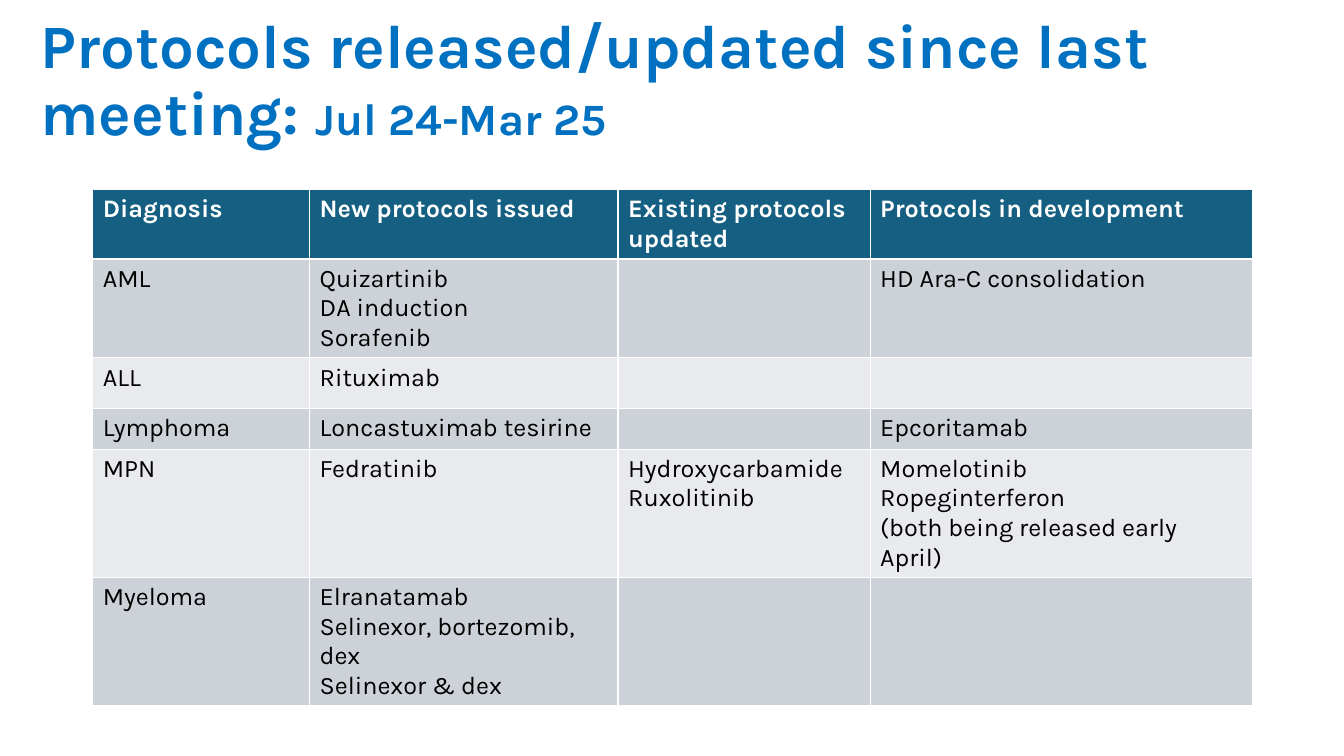
from pptx import Presentation
from pptx.dml.color import RGBColor
from pptx.enum import text
from pptx.util import Inches, Pt

FONT = "Karla"
COLORS = {"title": "0070C0", "header": "156082", "header_text": "FFFFFF",
          "body_text": "000000", "odd": "CCD2D8", "even": "E8EAED"}
TITLE = [("Protocols released/updated since last meeting: ", 44), ("Jul 24-Mar 25", 32)]
ROWS = [
    ("Diagnosis", "New protocols issued", "Existing protocols updated", "Protocols in development"),
    ("AML", "Quizartinib\nDA induction\nSorafenib", "", "HD Ara-C consolidation"),
    ("ALL", "Rituximab", "", ""),
    ("Lymphoma", "Loncastuximab tesirine", "", "Epcoritamab"),
    ("MPN", "Fedratinib", "Hydroxycarbamide\nRuxolitinib",
     "Momelotinib\nRopeginterferon\n(both being released early April)"),
    ("Myeloma", "Elranatamab\nSelinexor, bortezomib, dex\nSelinexor & dex", "", ""),
]
COL_WIDTHS = [2.15, 3.06, 2.5, 3.79]
ROW_HEIGHTS = [0.69, 0.97, 0.5, 0.4, 1.27, 1.27]


def style(r, size, color, bold):
    r.font.name = FONT
    r.font.size = Pt(size)
    r.font.bold = bold
    r.font.color.rgb = RGBColor.from_string(COLORS[color])


def add_title(s):
    sp = s.shapes.title
    sp.left, sp.top, sp.width, sp.height = map(Inches, (0.3, 0.09, 12.73, 1.45))
    tf = sp.text_frame
    tf.word_wrap = True
    tf.auto_size = text.MSO_AUTO_SIZE.NONE
    tf.vertical_anchor = text.MSO_ANCHOR.MIDDLE
    p = tf.paragraphs[0]
    p.alignment = text.PP_ALIGN.LEFT
    p.line_spacing = 0.9
    for words, size in TITLE:
        r = p.add_run()
        r.text = words
        style(r, size, "title", True)


def add_protocols(s):
    tbl = s.shapes.add_table(len(ROWS), len(COL_WIDTHS), Inches(0.92), Inches(1.88),
                             Inches(sum(COL_WIDTHS)), Inches(sum(ROW_HEIGHTS))).table
    for col, width in zip(tbl.columns, COL_WIDTHS):
        col.width = Inches(width)
    for row, height in zip(tbl.rows, ROW_HEIGHTS):
        row.height = Inches(height)
    for i, row in enumerate(ROWS):
        header = i == 0
        fill = "header" if header else ("odd" if i % 2 else "even")
        for j, words in enumerate(row):
            cell = tbl.cell(i, j)
            cell.fill.solid()
            cell.fill.fore_color.rgb = RGBColor.from_string(COLORS[fill])
            cell.text_frame.text = words
            for p in cell.text_frame.paragraphs:
                for r in p.runs:
                    style(r, 18, "header_text" if header else "body_text", header)


def main():
    prs = Presentation()
    prs.slide_width, prs.slide_height = Inches(13.33), Inches(7.5)
    s = prs.slides.add_slide(prs.slide_layouts[5])
    add_title(s)
    add_protocols(s)
    prs.save("out.pptx")


if __name__ == "__main__":
    main()
